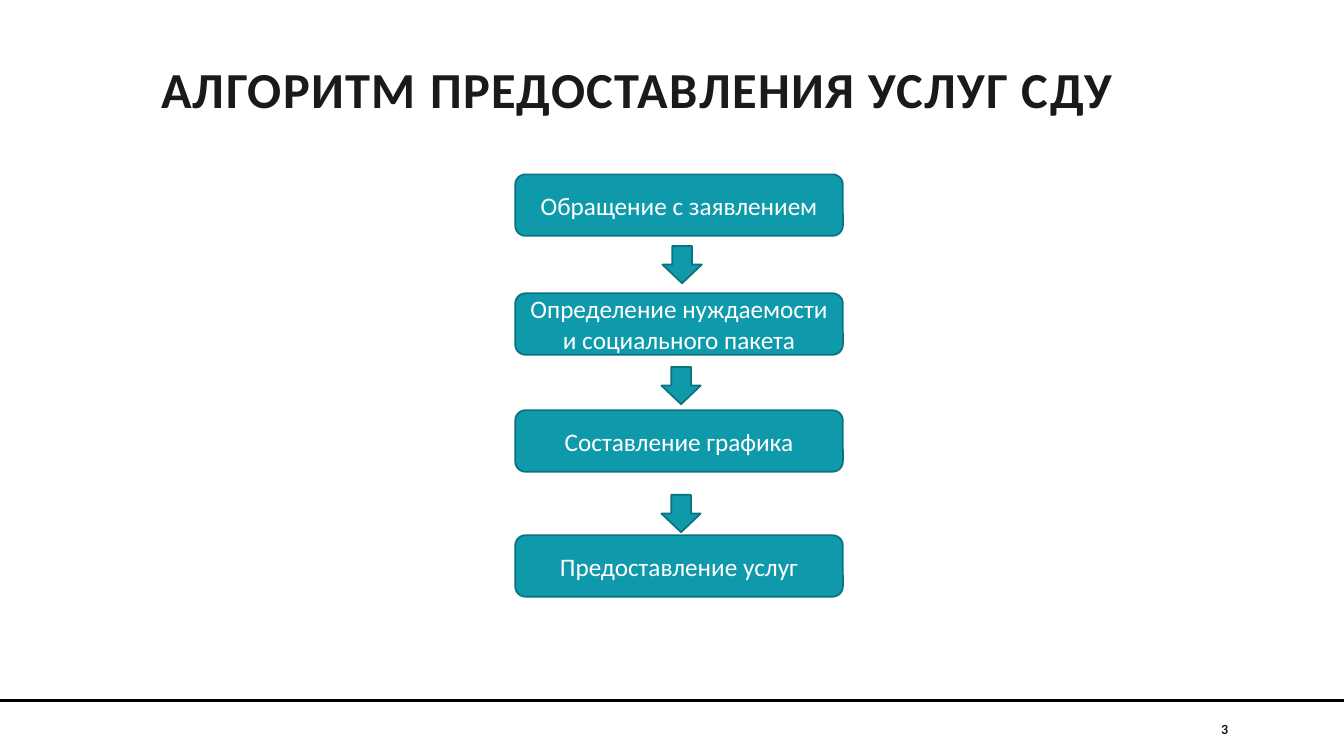
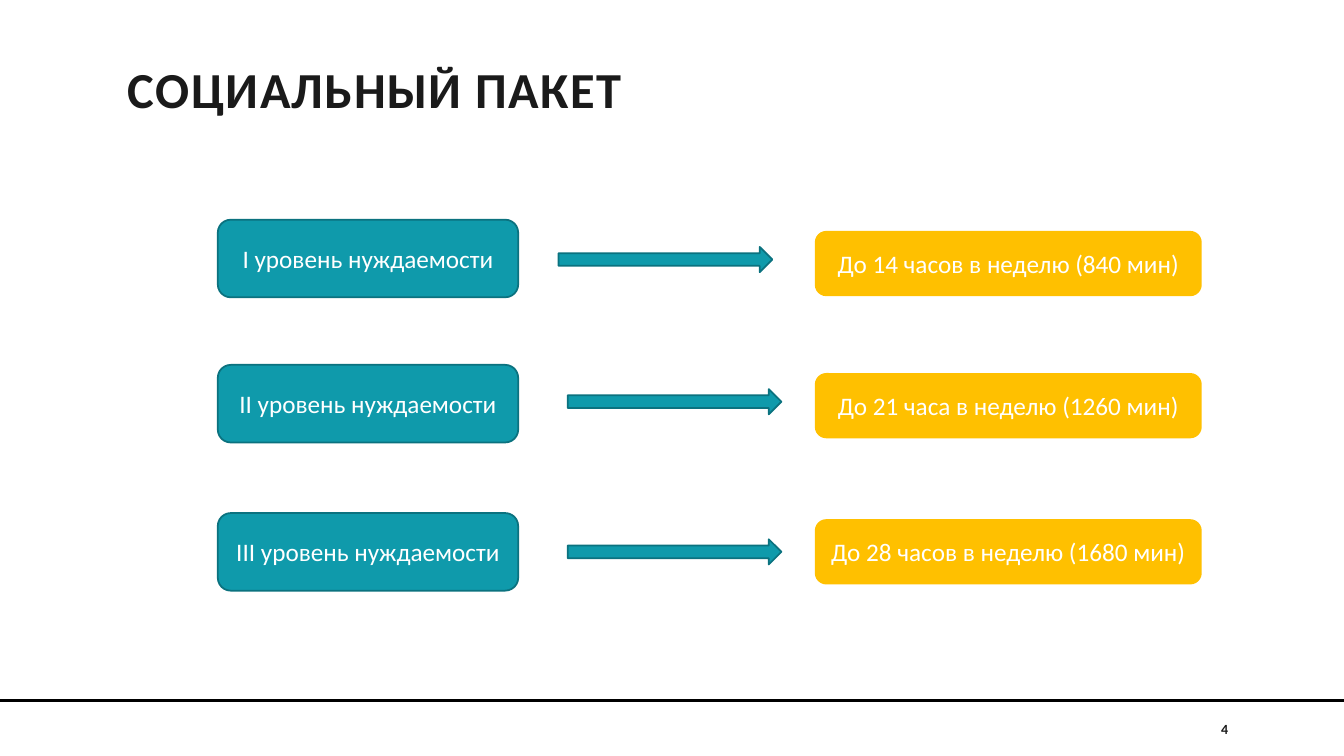
"""Build two slides on how home care services are provided."""
from dataclasses import dataclass

from lxml.etree import SubElement
from pptx import Presentation
from pptx.dml.color import RGBColor
from pptx.enum.shapes import MSO_CONNECTOR, MSO_SHAPE
from pptx.enum.text import MSO_ANCHOR, PP_ALIGN
from pptx.oxml.ns import qn
from pptx.slide import Slide
from pptx.text.text import TextFrame
from pptx.util import Inches, Pt

FONT = "Calibri"
TEAL = RGBColor(0x0F, 0x9A, 0xAB)
DARK_TEAL = RGBColor(0x0B, 0x72, 0x7F)
AMBER = RGBColor(0xFF, 0xC0, 0x00)
INK = RGBColor(0x1A, 0x1A, 0x1A)
BLACK = RGBColor(0x00, 0x00, 0x00)
WHITE = RGBColor(0xFF, 0xFF, 0xFF)
SLIDE_WIDTH, SLIDE_HEIGHT = 13.33, 7.5
RULE_TOP = 6.95
TITLE_RIGHT = 12.2


@dataclass(frozen=True)
class BlockStyle:
    preset: MSO_SHAPE
    width: float
    height: float
    fill: RGBColor = TEAL
    line: RGBColor = DARK_TEAL


@dataclass(frozen=True)
class Step:
    text: str
    top: float


@dataclass(frozen=True)
class Arrow:
    left: float
    top: float


@dataclass(frozen=True)
class Level:
    need: Step
    arrow: Arrow
    hours: Step


STEP_BOX = BlockStyle(MSO_SHAPE.ROUNDED_RECTANGLE, 3.25, 0.61)
DOWN_ARROW = BlockStyle(MSO_SHAPE.DOWN_ARROW, 0.39, 0.37)
NEED_BOX = BlockStyle(MSO_SHAPE.ROUNDED_RECTANGLE, 2.98, 0.77)
RIGHT_ARROW = BlockStyle(MSO_SHAPE.RIGHT_ARROW, 2.12, 0.25)
HOURS_BOX = BlockStyle(MSO_SHAPE.ROUNDED_RECTANGLE, 3.82, 0.63, AMBER, AMBER)
STEP_LEFT, NEED_LEFT, HOURS_LEFT = 5.11, 2.16, 8.09

STEPS = (
    Step("Обращение с заявлением", 1.73),
    Step("Определение нуждаемости и социального пакета", 2.91),
    Step("Составление графика", 4.07),
    Step("Предоставление услуг", 5.31),
)
STEP_ARROWS = (Arrow(6.57, 2.44), Arrow(6.56, 3.64), Arrow(6.56, 4.91))
LEVELS = (
    Level(Step("I уровень нуждаемости", 2.18), Arrow(5.54, 2.45),
          Step("До 14 часов в неделю (840 мин)", 2.3)),
    Level(Step("II уровень нуждаемости", 3.62), Arrow(5.63, 3.86),
          Step("До 21 часа в неделю (1260 мин)", 3.71)),
    Level(Step("III уровень нуждаемости", 5.09), Arrow(5.63, 5.35),
          Step("До 28 часов в неделю (1680 мин)", 5.16)),
)


def write_text(frame: TextFrame, text: str, size: float, color: RGBColor,
               align: PP_ALIGN, anchor: MSO_ANCHOR, bold: bool = False) -> None:
    frame.word_wrap = True
    frame.vertical_anchor = anchor
    frame.text = text
    paragraph = frame.paragraphs[0]
    paragraph.alignment = align
    font = paragraph.runs[0].font
    font.name, font.size, font.bold = FONT, Pt(size), bold
    font.color.rgb = color


def add_block(slide: Slide, style: BlockStyle, left: float, top: float,
              text: str = "") -> None:
    shape = slide.shapes.add_shape(style.preset, Inches(left), Inches(top),
                                   Inches(style.width), Inches(style.height))
    shape.shadow.inherit = False
    shape.fill.solid()
    shape.fill.fore_color.rgb = style.fill
    shape.line.color.rgb = style.line
    shape.line.width = Pt(1.25)
    if text:
        write_text(shape.text_frame, text, 18, WHITE, PP_ALIGN.CENTER, MSO_ANCHOR.MIDDLE)


def add_rule(slide: Slide) -> None:
    rule = slide.shapes.add_connector(MSO_CONNECTOR.STRAIGHT, Inches(0), Inches(RULE_TOP),
                                      Inches(SLIDE_WIDTH), Inches(RULE_TOP))
    rule.line.color.rgb = BLACK
    rule.line.width = Pt(2.5)
    SubElement(rule._element.spPr, qn("a:effectLst"))


def add_title(slide: Slide, text: str, left: float) -> None:
    box = slide.shapes.add_textbox(Inches(left), Inches(0.64),
                                   Inches(TITLE_RIGHT - left), Inches(0.89))
    write_text(box.text_frame, text, 36, INK, PP_ALIGN.LEFT, MSO_ANCHOR.TOP, bold=True)
    paragraph = box.text_frame.paragraphs[0]
    paragraph.line_spacing = 0.8
    paragraph.runs[0].font._element.set("spc", "100")


def add_page_number(slide: Slide, number: int) -> None:
    box = slide.shapes.add_textbox(Inches(11.22), Inches(7.08), Inches(1.06), Inches(0.3))
    write_text(box.text_frame, str(number), 10, INK, PP_ALIGN.RIGHT,
               MSO_ANCHOR.MIDDLE, bold=True)


def add_page(presentation: Presentation, title: str, title_left: float, number: int) -> Slide:
    slide = presentation.slides.add_slide(presentation.slide_layouts[6])
    add_rule(slide)
    add_title(slide, title, title_left)
    add_page_number(slide, number)
    return slide


def build_algorithm(presentation: Presentation) -> None:
    slide = add_page(presentation, "АЛГОРИТМ ПРЕДОСТАВЛЕНИЯ УСЛУГ СДУ", 1.5, 3)
    for step in STEPS:
        add_block(slide, STEP_BOX, STEP_LEFT, step.top, step.text)
    for arrow in STEP_ARROWS:
        add_block(slide, DOWN_ARROW, arrow.left, arrow.top)


def build_social_package(presentation: Presentation) -> None:
    slide = add_page(presentation, "СОЦИАЛЬНЫЙ ПАКЕТ", 1.17, 4)
    for level in LEVELS:
        add_block(slide, NEED_BOX, NEED_LEFT, level.need.top, level.need.text)
        add_block(slide, RIGHT_ARROW, level.arrow.left, level.arrow.top)
        add_block(slide, HOURS_BOX, HOURS_LEFT, level.hours.top, level.hours.text)


def main() -> None:
    presentation = Presentation()
    presentation.slide_width = Inches(SLIDE_WIDTH)
    presentation.slide_height = Inches(SLIDE_HEIGHT)
    build_algorithm(presentation)
    build_social_package(presentation)
    presentation.save("out.pptx")


if __name__ == "__main__":
    main()
